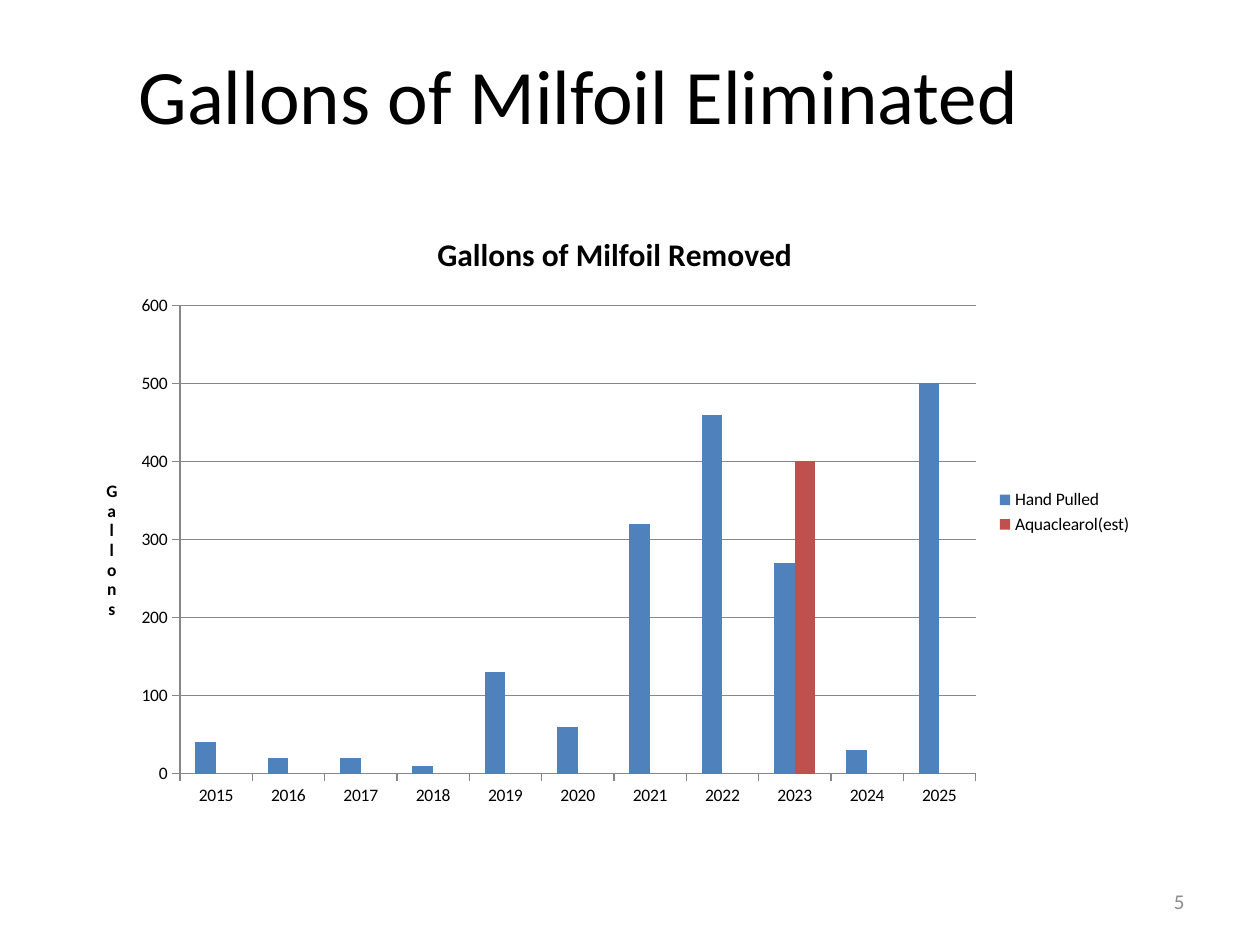
from lxml import etree
from pptx import Presentation
from pptx.chart.data import CategoryChartData
from pptx.dml.color import RGBColor
from pptx.enum.chart import XL_CHART_TYPE as ChartType
from pptx.enum.chart import XL_LEGEND_POSITION as LegendPos
from pptx.enum.chart import XL_TICK_MARK as Tick
from pptx.enum.text import MSO_ANCHOR as Anchor
from pptx.enum.text import MSO_AUTO_SIZE as AutoSize
from pptx.enum.text import PP_ALIGN as Align
from pptx.oxml.ns import qn
from pptx.util import Inches, Pt

# Content
HEADING = "Gallons of Milfoil Eliminated"
CHART_TITLE = "Gallons of Milfoil Removed"
AXIS_TITLE = "Gallons"
PAGE = "5"
YEARS = [str(year) for year in range(2015, 2026)]
TREATMENTS = [
    ("Hand Pulled", "blue", [40, 20, 20, 10, 130, 60, 320, 460, 270, 30, 500]),
    ("Aquaclearol(est)", "red", [None] * 8 + [400, None, None]),
]
COLORS = {"black": "000000", "blue": "4F81BD", "red": "C0504D",
          "grid": "878787", "page": "8C8C8C"}
FONT = "Calibri"
# Inner plot area as fractions of the chart
PLOT_AREA = {"x": 0.09, "y": 0.16, "w": 0.75, "h": 0.77}


def color(name):
    return RGBColor.from_string(COLORS[name])


def style(font, size, name="black", bold=False):
    font.name, font.size, font.bold = FONT, Pt(size), bold
    font.color.rgb = color(name)


def write(frame, text, size, name="black", bold=False, align=Align.LEFT):
    paragraph = frame.paragraphs[0]
    paragraph.alignment = align
    run = paragraph.add_run()
    run.text = text
    style(run.font, size, name, bold)


def place(shape, left, top, width, height):
    shape.left, shape.top = Inches(left), Inches(top)
    shape.width, shape.height = Inches(width), Inches(height)


def set_plot_area(chart):
    plot_area = chart._chartSpace.chart.plotArea
    for old in plot_area.findall(qn("c:layout")):
        plot_area.remove(old)
    layout = etree.Element(qn("c:layout"))
    manual = etree.SubElement(layout, qn("c:manualLayout"))
    settings = {"layoutTarget": "inner", "xMode": "edge", "yMode": "edge", **PLOT_AREA}
    for key, value in settings.items():
        etree.SubElement(manual, qn(f"c:{key}")).set("val", str(value))
    plot_area.insert(0, layout)


prs = Presentation()
prs.slide_width, prs.slide_height = Inches(10), Inches(7.5)
slide = prs.slides.add_slide(prs.slide_layouts[5])

# Page number
page = slide.shapes.add_textbox(Inches(7.17), Inches(6.95), Inches(2.33), Inches(0.4))
page.text_frame.word_wrap = True
page.text_frame.vertical_anchor = Anchor.MIDDLE
write(page.text_frame, PAGE, 12, "page", align=Align.RIGHT)

# Heading
heading = slide.shapes.title
place(heading, 1, 0.33, 8.08, 0.84)
heading.text_frame.word_wrap = True
heading.text_frame.auto_size = AutoSize.SHAPE_TO_FIT_TEXT
heading.text_frame.vertical_anchor = Anchor.TOP
write(heading.text_frame, HEADING, 44)

# Chart
data = CategoryChartData()
data.categories = YEARS
for label, _, gallons in TREATMENTS:
    data.add_series(label, gallons)
chart = slide.shapes.add_chart(
    ChartType.COLUMN_CLUSTERED, Inches(0.67), Inches(1.65),
    Inches(8.42), Inches(4.83), data).chart
style(chart.font, 10)
set_plot_area(chart)
write(chart.chart_title.text_frame, CHART_TITLE, 18, bold=True, align=Align.CENTER)
chart.chart_title.include_in_layout = False

# Legend and columns
chart.has_legend = True
chart.legend.position = LegendPos.RIGHT
chart.legend.include_in_layout = False
columns = chart.plots[0]
columns.gap_width, columns.overlap = 150, 0
columns.vary_by_categories = False
for series, (_, fill, _) in zip(columns.series, TREATMENTS):
    series.format.fill.solid()
    series.format.fill.fore_color.rgb = color(fill)

# Axes
gallons_axis = chart.value_axis
gallons_axis.minimum_scale, gallons_axis.maximum_scale = 0, 600
gallons_axis.major_unit = 100
gallons_axis.has_major_gridlines = True
axis_frame = gallons_axis.axis_title.text_frame
write(axis_frame, AXIS_TITLE, 10, bold=True, align=Align.CENTER)
axis_body = axis_frame._txBody.find(qn("a:bodyPr"))
axis_body.set("rot", "0")
axis_body.set("vert", "wordArtVert")
for axis in (chart.category_axis, gallons_axis):
    axis.major_tick_mark = Tick.OUTSIDE
    axis.minor_tick_mark = Tick.NONE
for part in (chart.category_axis, gallons_axis, gallons_axis.major_gridlines):
    part.format.line.color.rgb = color("grid")
    part.format.line.width = Pt(0.75)

prs.save("out.pptx")
